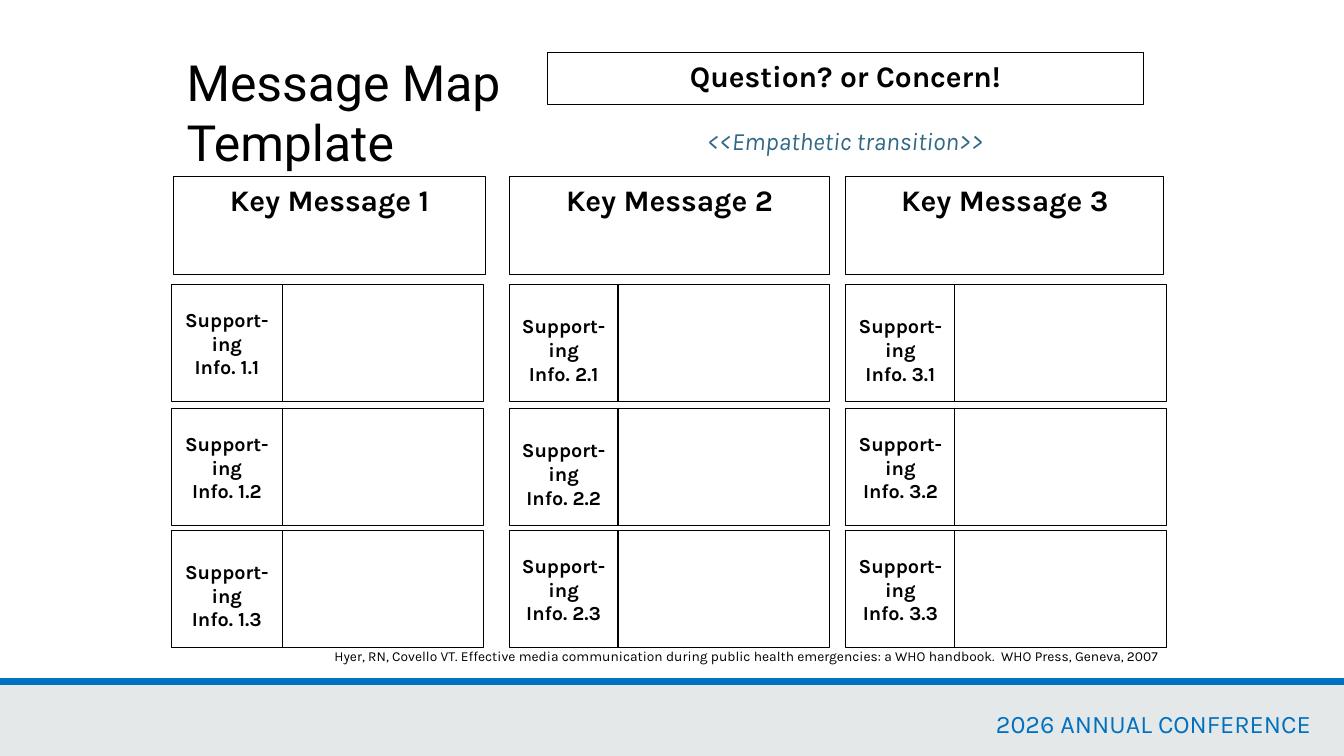
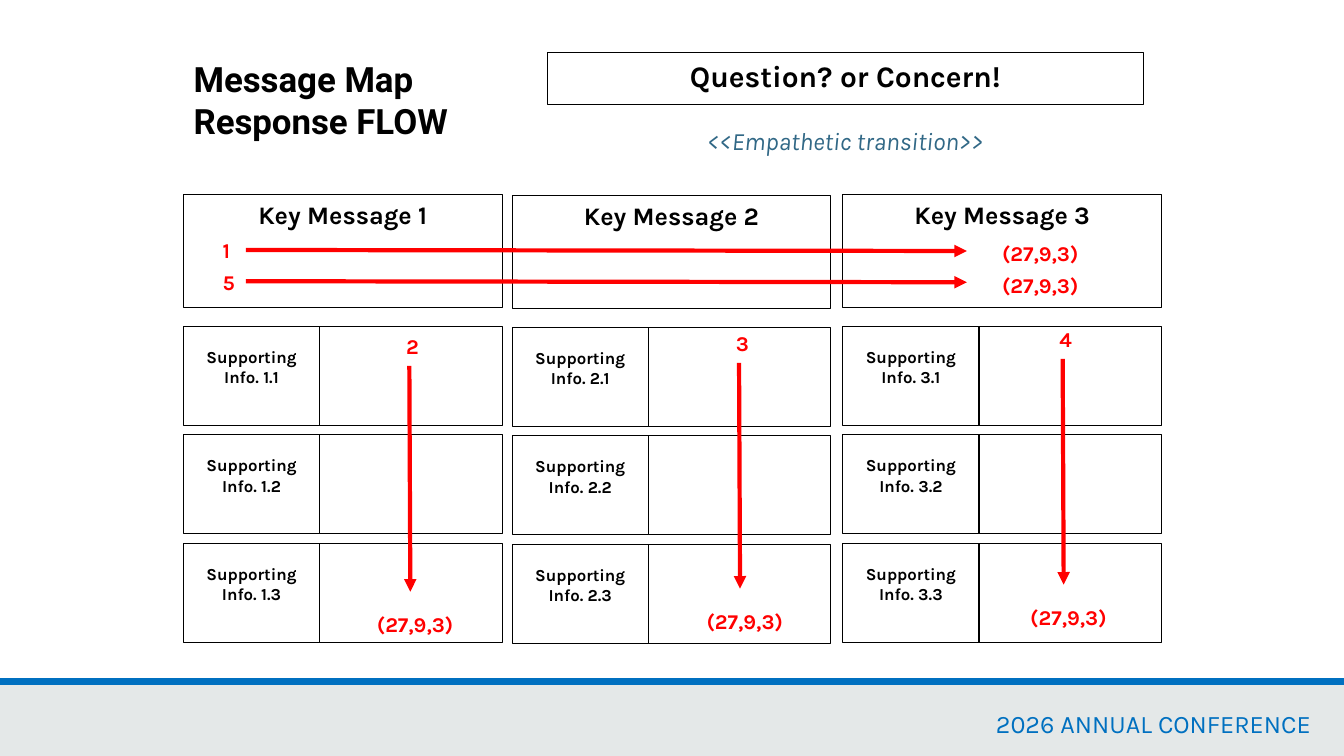
from lxml import etree
from pptx import Presentation
from pptx.dml.color import RGBColor
from pptx.enum.shapes import MSO_CONNECTOR, MSO_SHAPE
from pptx.enum.text import MSO_ANCHOR, MSO_AUTO_SIZE, PP_ALIGN
from pptx.oxml.ns import qn
from pptx.util import Inches, Pt

RECTANGLE = MSO_SHAPE.RECTANGLE
STRAIGHT = MSO_CONNECTOR.STRAIGHT
TOP = MSO_ANCHOR.TOP
NO_FIT = MSO_AUTO_SIZE.NONE
LEFT, CENTER, RIGHT = PP_ALIGN.LEFT, PP_ALIGN.CENTER, PP_ALIGN.RIGHT

TITLE_ONLY = 5
WIDTH, HEIGHT, BAND_TOP = 13.33, 7.5, 6.76
BODY_FONT, TITLE_FONT = "Karla", "Roboto"
BLACK, WHITE, RED = "000000", "FFFFFF", "FF0000"
BLUE, BAND_GRAY, TRANSITION_BLUE = "0070C0", "E4E8E8", "316886"
TOTAL = "(27,9,3)"

# Template slide: key left, key width, label left, label width, info width
TEMPLATE_COLUMNS = [
    (1.72, 3.1, 1.7, 1.1, 2),
    (5.05, 3.18, 5.05, 1.08, 2.1),
    (8.39, 3.15, 8.39, 1.08, 2.1),
]
TEMPLATE_ROWS = [2.82, 4.05, 5.26]
LOWERED_LABELS = {"1.3", "2.1", "2.2", "3.1"}

# Flow slide: left and top of each column; x and top of each down arrow
FLOW_COLUMNS = [(1.82, 1.93), (5.08, 1.94), (8.36, 1.93)]
DOWN_ARROWS = [("2", 4.06, 3.63), ("3", 7.33, 3.6), ("4", 10.54, 3.56)]
ACROSS_ARROWS = [("1", 2.48), ("5", 2.79)]


def color(value):
    return RGBColor.from_string(value)


def place(*lengths):
    return [Inches(length) for length in lengths]


# Element helpers
def write(shape, *lines, size, font=BODY_FONT, ink=BLACK, bold=False,
          italic=False, align=LEFT, top_inset=0.05):
    frame = shape.text_frame
    frame.word_wrap = True
    frame.auto_size = NO_FIT
    frame.vertical_anchor = TOP
    frame.margin_left = frame.margin_right = Inches(0.1)
    frame.margin_top, frame.margin_bottom = Inches(top_inset), Inches(0.05)
    for index, line in enumerate(lines):
        para = frame.add_paragraph() if index else frame.paragraphs[0]
        para.alignment = align
        span = para.add_run()
        span.text = line
        span.font.name, span.font.size = font, Pt(size)
        span.font.bold, span.font.italic = bold, italic
        span.font.color.rgb = color(ink)


def add_text(shapes, box, *lines, **style):
    shape = shapes.add_textbox(*place(*box))
    write(shape, *lines, **style)
    return shape


def add_box(shapes, box, *lines, fill=WHITE, line=BLACK, weight=0.75, **style):
    shape = shapes.add_shape(RECTANGLE, *place(*box))
    shape.shadow.inherit = False
    shape.fill.solid()
    shape.fill.fore_color.rgb = color(fill)
    shape.line.color.rgb = color(line)
    shape.line.width = Pt(weight)
    if lines:
        write(shape, *lines, bold=True, align=CENTER, **style)
    return shape


def add_line(shapes, ends, ink, weight, arrow=False):
    line = shapes.add_connector(STRAIGHT, *place(*ends))
    line.line.color.rgb = color(ink)
    line.line.width = Pt(weight)
    if arrow:
        etree.SubElement(line.line._get_or_add_ln(), qn("a:tailEnd"), type="triangle")
    etree.SubElement(line.element.spPr, qn("a:effectLst"))
    return line


def add_red(shapes, text, left, top):
    width = 1 if text == TOTAL else 0.3
    add_text(shapes, (left, top, width, 0.35), text, size=15, ink=RED, bold=True)


# Shared parts
def add_footer_band(layout, page):
    """Draw the band on a page, then move it to the layout that all pages use."""
    for holder in list(layout.placeholders)[1:]:
        layout.shapes.element.remove(holder.element)
    parts = [
        add_box(page.shapes, (0, BAND_TOP, WIDTH, HEIGHT - BAND_TOP),
                fill=BAND_GRAY, line=BAND_GRAY, weight=1),
        add_text(page.shapes, (9.78, 6.98, 3.5, 0.4), "2026 ANNUAL CONFERENCE",
                 size=18, ink=BLUE),
        add_line(page.shapes, (0, BAND_TOP, WIDTH, BAND_TOP), BLUE, 4.5),
    ]
    for part in parts:
        layout.shapes.element.append(part.element)


def add_heading(page, box, text, **style):
    title = page.shapes.title
    title.left, title.top, title.width, title.height = place(*box)
    write(title, text, font=TITLE_FONT, **style)
    add_box(page.shapes, (5.43, 0.52, 5.91, 0.52), "Question? or Concern!", size=21.3)
    add_text(page.shapes, (5.43, 1.2, 5.91, 0.4), "<<Empathetic transition>>",
             size=17.8, ink=TRANSITION_BLUE, italic=True, align=CENTER)


def add_info_row(shapes, box, info_width, *lines, **style):
    left, top, width, height = box
    add_box(shapes, box, *lines, **style)
    add_box(shapes, (left + width, top, info_width, height))


# Slides
def build_template(page):
    add_heading(page, (1.75, 0.46, 4.02, 1.3), "Message Map Template", size=35.6)
    for number, column in enumerate(TEMPLATE_COLUMNS, 1):
        key_left, key_width, left, label_width, info_width = column
        shapes = page.shapes.add_group_shape().shapes
        add_box(shapes, (key_left, 1.75, key_width, 0.97),
                f"Key Message {number}", size=21.3)
        for row, top in enumerate(TEMPLATE_ROWS, 1):
            label = f"{number}.{row}"
            add_info_row(shapes, (left, top, label_width, 1.16), info_width,
                         "Support-ing", f"Info. {label}", size=14.2,
                         top_inset=0.29 if label in LOWERED_LABELS else 0.23)
    add_text(page.shapes, (1.78, 6.38, 9.81, 0.27),
             "Hyer, RN, Covello VT. Effective media communication during public health "
             "emergencies: a WHO handbook.  WHO Press, Geneva, 2007",
             size=9.8, align=RIGHT)


def build_flow(page):
    add_heading(page, (1.82, 0.52, 3.12, 0.94), "Message Map Response FLOW",
                size=24.9, bold=True)
    for number, (left, top) in enumerate(FLOW_COLUMNS, 1):
        shapes = page.shapes.add_group_shape().shapes
        add_box(shapes, (left, top, 3.16, 1.12), f"Key Message {number}", size=18)
        for row in range(3):
            add_info_row(shapes, (left, top + 1.31 + 1.075 * row, 1.35, 0.98), 1.81,
                         f"Supporting Info. {number}.{row + 1}", size=12, top_inset=0.2)
    # Order of the response
    for step, y in ACROSS_ARROWS:
        add_line(page.shapes, (2.44, y, 9.59, y + 0.01), RED, 3, arrow=True)
        add_red(page.shapes, step, 2.11, y - 0.17)
        add_red(page.shapes, TOTAL, 9.84, y - 0.14)
    for step, x, y in DOWN_ARROWS:
        add_line(page.shapes, (x, y, x + 0.01, y + 2.24), RED, 3, arrow=True)
        add_red(page.shapes, step, x - 0.13, y - 0.37)
        add_red(page.shapes, TOTAL, x - 0.42, y + 2.39)


def main():
    deck = Presentation()
    deck.slide_width, deck.slide_height = place(WIDTH, HEIGHT)
    layout = deck.slide_layouts[TITLE_ONLY]
    template_page, flow_page = [deck.slides.add_slide(layout) for _ in range(2)]
    add_footer_band(layout, template_page)
    build_template(template_page)
    build_flow(flow_page)
    deck.save("out.pptx")


if __name__ == "__main__":
    main()
